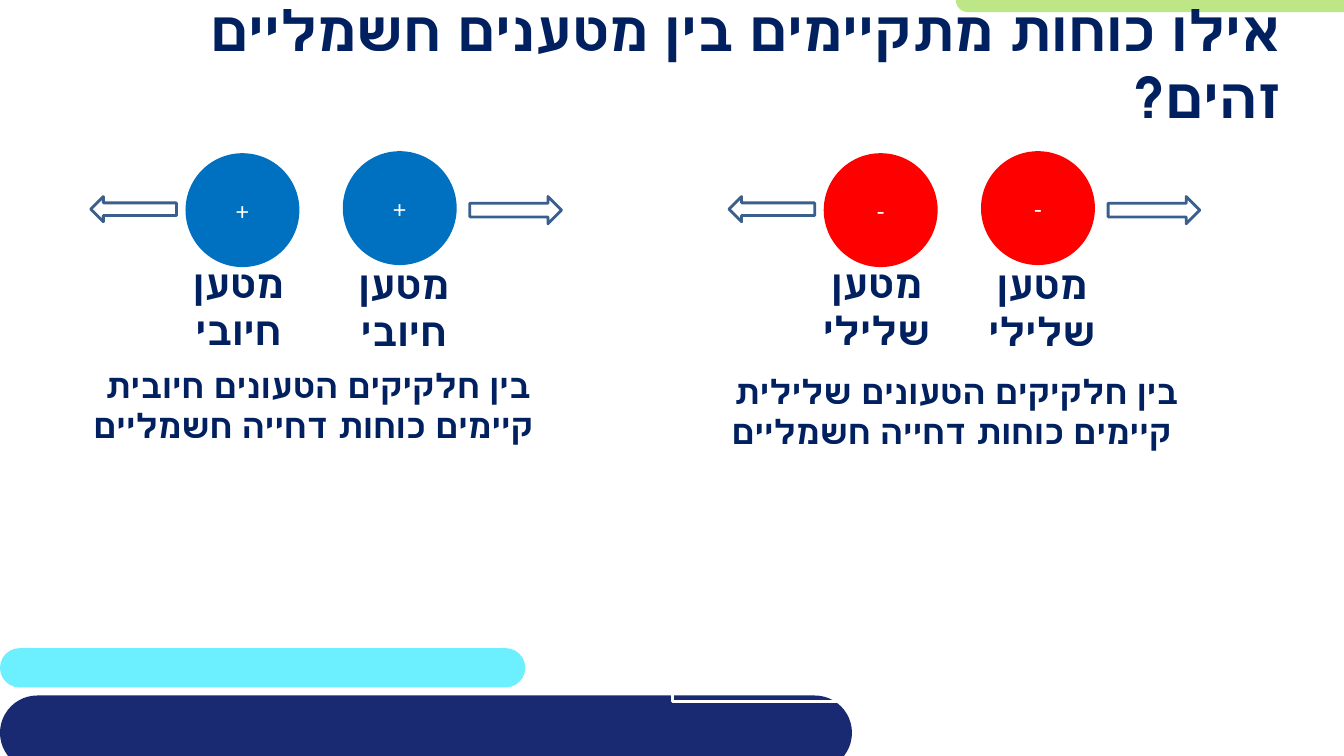
from pptx import Presentation, util as u
from pptx.dml.color import RGBColor
from pptx.enum import shapes, text
from pptx.oxml.ns import qn
from lxml import etree

PX = u.Inches(1) // 100
NAVY = RGBColor(0x00, 0x20, 0x60)
BAR_NAVY = RGBColor(0x19, 0x2A, 0x72)
CYAN = RGBColor(0x6C, 0xF0, 0xFF)
GREEN = RGBColor(0xBD, 0xE6, 0x86)
BLUE = RGBColor(0x00, 0x70, 0xC0)
RED = RGBColor(0xFF, 0x00, 0x00)
ARROW = RGBColor(0x3A, 0x5F, 0x8C)
WHITE = RGBColor(0xFF, 0xFF, 0xFF)
HEADING_FONT = "TeX Gyre Adventor"
SIGN_FONT = "Calibri"


def px(*lengths):
    """Turn whole px into EMU."""
    return [n * PX for n in lengths]


def write(tf, lines, size, color, font=HEADING_FONT, bold=True, align=text.PP_ALIGN.CENTER):
    """Fill a text frame with right-to-left paragraphs."""
    tf.word_wrap = True
    tf.text = "\n".join(lines)
    for p in tf.paragraphs:
        p.alignment = align
        p._p.get_or_add_pPr().set("rtl", "1")
        for r in p.runs:
            r.font.size = u.Pt(size)
            r.font.bold = bold
            r.font.name = font
            r.font.color.rgb = color
            etree.SubElement(r._r.get_or_add_rPr(), qn("a:cs")).set("typeface", font)


def add_shape(parent, kind, box, fill=None, line=None):
    """Add a flat preset shape with an optional fill and outline."""
    sp = parent.shapes.add_shape(kind, *px(*box))
    sp.shadow.inherit = False
    if fill is None:
        sp.fill.background()
    else:
        sp.fill.solid()
        sp.fill.fore_color.rgb = fill
    if line is None:
        sp.line.fill.background()
    else:
        sp.line.color.rgb = line
        sp.line.width = u.Pt(2)
    return sp


def add_bar(s, box, fill):
    """Add a decorative bar with fully rounded ends."""
    add_shape(s, shapes.MSO_SHAPE.ROUNDED_RECTANGLE, box, fill).adjustments[0] = 0.5


def add_charge(group, x, y, sign, fill):
    """Add a charged particle marked with its sign."""
    sp = add_shape(group, shapes.MSO_SHAPE.OVAL, (x, y, 113, 113), fill)
    sp.text_frame.vertical_anchor = text.MSO_ANCHOR.MIDDLE
    write(sp.text_frame, [sign], 18, WHITE, SIGN_FONT, False)


def add_arrow(group, box, rotation=0):
    """Add an outlined block arrow."""
    sp = add_shape(group, shapes.MSO_SHAPE.RIGHT_ARROW, box, WHITE, ARROW)
    sp.rotation = rotation


def add_label(group, box, lines, size):
    """Add a centred text box."""
    write(group.shapes.add_textbox(*px(*box)).text_frame, lines, size, NAVY)


def add_repulsion(s, x, caption_y, sign, fill, label, caption):
    """Add two like charges pushing each other apart, with their texts."""
    group = s.shapes.add_group_shape()
    add_charge(group, x + 94, 152, sign, fill)
    add_charge(group, x + 250, 150, sign, fill)
    add_arrow(group, (x + 376, 195, 91, 27))
    add_arrow(group, (x, 195, 85, 25), 180)
    add_label(group, (x - 141, caption_y, 733, 91), caption, 24)
    add_label(group, (x + 217, 253, 187, 104), [label], 28)
    add_label(group, (x + 53, 252, 187, 104), [label], 28)


def add_title(s, title):
    """Place the title in front of the bars and format it."""
    sp = s.shapes.title
    s.shapes._spTree.append(sp._element)
    sp.left, sp.top, sp.width, sp.height = px(56, 23, 1220, 79)
    tf = sp.text_frame
    tf.auto_size = text.MSO_AUTO_SIZE.NONE
    tf.vertical_anchor = text.MSO_ANCHOR.MIDDLE
    tf.margin_left, tf.margin_top, tf.margin_right, tf.margin_bottom = px(4, 0, 4, 0)
    write(tf, [title], 40, NAVY, align=text.PP_ALIGN.RIGHT)


def main():
    """Build the slide on repulsion between like charges."""
    prs = Presentation()
    prs.slide_width, prs.slide_height = px(1333, 750)
    s = prs.slides.add_slide(prs.slide_layouts[5])
    add_bar(s, (0, 643, 521, 39), CYAN)
    add_bar(s, (948, -12, 580, 24), GREEN)
    add_bar(s, (0, 690, 845, 74), BAR_NAVY)
    add_title(s, "אילו כוחות מתקיימים בין מטענים חשמליים זהים?")
    forces = " קיימים כוחות דחייה חשמליים"
    add_repulsion(s, 90, 357, "+", BLUE, "מטען חיובי",
                  ["בין חלקיקים הטעונים חיובית", forces])
    add_shape(s, shapes.MSO_SHAPE.RECTANGLE, (667, 483, 599, 213), line=WHITE)
    add_repulsion(s, 723, 363, "-", RED, "מטען שלילי",
                  ["בין חלקיקים הטעונים שלילית", forces])
    prs.save("out.pptx")


if __name__ == "__main__":
    main()
